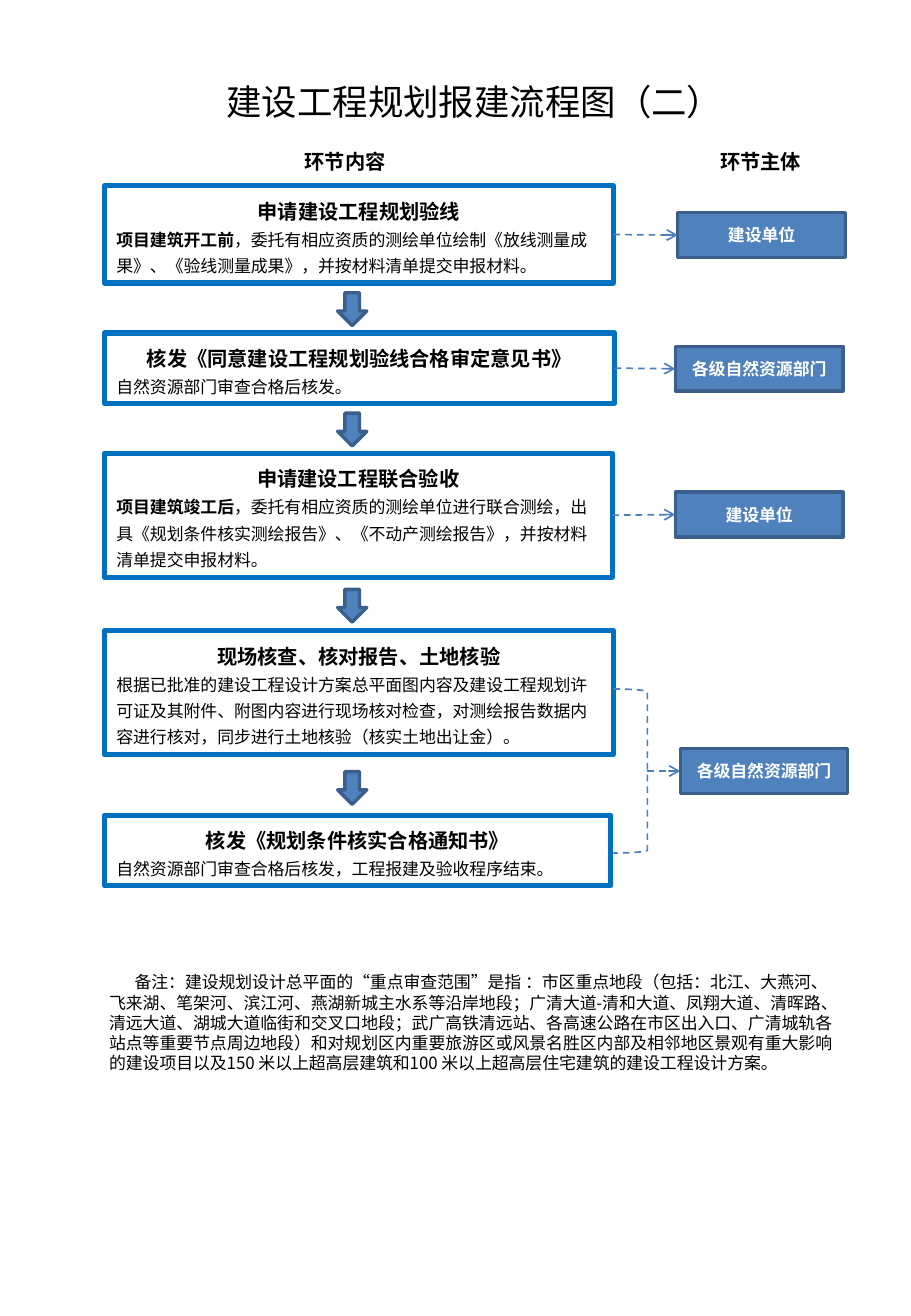
from dataclasses import dataclass

from lxml.etree import SubElement
from pptx import Presentation
from pptx.dml.color import RGBColor
from pptx.enum.dml import MSO_LINE
from pptx.enum.shapes import MSO_CONNECTOR, MSO_SHAPE as Shape
from pptx.enum.text import MSO_ANCHOR as Anchor, MSO_AUTO_SIZE, PP_ALIGN as Align
from pptx.oxml.ns import qn
from pptx.util import Inches, Pt

TITLE = "建设工程规划报建流程图（二）"
HEADINGS = [("环节内容", 2.41), ("环节主体", 5.83)]  # text, left

# top, width, height, heading, bold lead-in, detail
STEPS = [
    (1.53, 4.19, 0.80, "申请建设工程规划验线", "项目建筑开工前",
     "，委托有相应资质的测绘单位绘制《放线测量成果》、《验线测量成果》，并按材料清单提交申报材料。"),
    (2.74, 4.20, 0.58, "核发《同意建设工程规划验线合格审定意见书》", "",
     "自然资源部门审查合格后核发。"),
    (3.73, 4.18, 1.02, "申请建设工程联合验收", "项目建筑竣工后",
     "，委托有相应资质的测绘单位进行联合测绘，出具《规划条件核实测绘报告》、"
     "《不动产测绘报告》，并按材料清单提交申报材料。"),
    (5.19, 4.19, 1.02, "现场核查、核对报告、土地核验", "",
     "根据已批准的建设工程设计方案总平面图内容及建设工程规划许可证及其附件、附图内容进行现场核对检查，"
     "对测绘报告数据内容进行核对，同步进行土地核验（核实土地出让金）。"),
    (6.71, 4.17, 0.58, "核发《规划条件核实合格通知书》", "",
     "自然资源部门审查合格后核发，工程报建及验收程序结束。"),
]
ARROW_TOPS = [2.41, 3.40, 4.85, 6.35]

# left, top, name; the last one answers for the final two steps
ACTORS = [
    (5.58, 1.75, "建设单位"),
    (5.56, 2.85, "各级自然资源部门"),
    (5.56, 4.05, "建设单位"),
    (5.60, 6.16, "各级自然资源部门"),
]

NOTE = (
    "备注：建设规划设计总平面的“重点审查范围”是指 ：市区重点地段（包括：北江、大燕河、飞来湖、笔架河、"
    "滨江河、燕湖新城主水系等沿岸地段；广清大道-清和大道、凤翔大道、清晖路、清远大道、湖城大道临街和"
    "交叉口地段；武广高铁清远站、各高速公路在市区出入口、广清城轨各站点等重要节点周边地段）和对规划区内"
    "重要旅游区或风景名胜区内部及相邻地区景观有重大影响的建设项目以及150 米以上超高层建筑和100 米以上"
    "超高层住宅建筑的建设工程设计方案。"
)

STEP_LEFT = 0.86
ACTOR_SIZE = (1.38, 0.37)
BRACKET = (5.05, 5.67, 0.28, 1.35)
RIGHT_SIDE, LEFT_SIDE = 3, 1


@dataclass(frozen=True)
class Theme:
    font: str = "Noto Sans CJK SC"
    text: str = "000000"
    inverse: str = "FFFFFF"
    frame: str = "0070C0"
    fill: str = "4F81BD"
    edge: str = "3A5F8C"
    link: str = "4B7EBC"
    title_size: int = 21
    heading_size: int = 12
    body_size: int = 10
    line_height: float = 1.2


THEME = Theme()


def add_span(para, text, size, color=THEME.text, bold=False):
    span = para.add_run()
    span.text = text
    span.font.size = Pt(size)
    span.font.name = THEME.font
    span.font.bold = bold
    span.font.color.rgb = RGBColor.from_string(color)
    SubElement(span.font._element, qn("a:ea"), typeface=THEME.font)


def set_para(para, size, align=Align.LEFT, spacing=1.0):
    """Align a paragraph and fix its line pitch in proportion to the type size."""
    para.alignment = align
    para.line_spacing = Pt(round(size * THEME.line_height * spacing, 1))
    para.space_before = Pt(0)


def set_frame(box, anchor=Anchor.TOP, wrap=True):
    frame = box.text_frame
    frame.word_wrap = wrap
    frame.auto_size = MSO_AUTO_SIZE.NONE
    frame.vertical_anchor = anchor
    frame.margin_left = frame.margin_right = Inches(0.1)
    frame.margin_top = frame.margin_bottom = Inches(0.05)
    return frame


def set_line(item, color, width, dashed=False):
    item.line.color.rgb = RGBColor.from_string(color)
    item.line.width = Pt(width)
    if dashed:
        item.line.dash_style = MSO_LINE.DASH


def add_box(page, kind, place, line, width, fill=None, dashed=False):
    box = page.shapes.add_shape(kind, *map(Inches, place))
    box.shadow.inherit = False
    if fill:
        box.fill.solid()
        box.fill.fore_color.rgb = RGBColor.from_string(fill)
    else:
        box.fill.background()
    set_line(box, line, width, dashed)
    return box


def add_text(page, place, text, size, bold=False, wrap=True):
    box = page.shapes.add_textbox(*map(Inches, place))
    para = set_frame(box, wrap=wrap).paragraphs[0]
    set_para(para, size)
    add_span(para, text, size, bold=bold)
    return para


def add_title(page):
    box = page.shapes.title
    box.left, box.top, box.width, box.height = map(Inches, (0.93, 0.61, 5.95, 0.45))
    para = set_frame(box).paragraphs[0]
    set_para(para, THEME.title_size, Align.CENTER)
    add_span(para, TITLE, THEME.title_size)


def add_step(page, top, width, height, heading, lead, detail):
    box = add_box(page, Shape.RECTANGLE, (STEP_LEFT, top, width, height), THEME.frame, 3)
    frame = set_frame(box)
    para = frame.paragraphs[0]
    set_para(para, THEME.heading_size, Align.CENTER, 1.3)
    add_span(para, heading, THEME.heading_size, bold=True)
    para = frame.add_paragraph()
    set_para(para, THEME.body_size, spacing=1.3)
    if lead:
        add_span(para, lead, THEME.body_size, bold=True)
    add_span(para, detail, THEME.body_size)
    return box


def add_actor(page, left, top, name):
    box = add_box(page, Shape.RECTANGLE, (left, top, *ACTOR_SIZE), THEME.edge, 2, THEME.fill)
    para = set_frame(box, Anchor.MIDDLE).paragraphs[0]
    set_para(para, THEME.body_size, Align.CENTER)
    add_span(para, name, THEME.body_size, THEME.inverse, True)
    return box


def add_link(page, actor, step=None):
    """Dashed arrow to an actor, from a step or else from the bracket's tip."""
    left, top, width, height = map(Inches, BRACKET)
    middle = actor.top + actor.height // 2
    link = page.shapes.add_connector(
        MSO_CONNECTOR.STRAIGHT, left + width, middle, actor.left, middle)
    if step is not None:
        link.begin_connect(step, RIGHT_SIDE)
    link.end_connect(actor, LEFT_SIDE)
    set_line(link, THEME.link, 1, dashed=True)
    SubElement(link.line._get_or_add_ln(), qn("a:tailEnd"), type="arrow")
    SubElement(link._element.spPr, qn("a:effectLst"))


def main():
    deck = Presentation()
    deck.slide_width, deck.slide_height = Inches(7.5), Inches(10.83)
    page = deck.slides.add_slide(deck.slide_layouts[5])

    add_title(page)
    for text, left in HEADINGS:
        add_text(page, (left, 1.18, 0.87, 0.3), text, THEME.heading_size, True, wrap=False)

    steps = [add_step(page, *step) for step in STEPS]
    for top in ARROW_TOPS:
        add_box(page, Shape.DOWN_ARROW, (2.78, top, 0.24, 0.27), THEME.edge, 2, THEME.fill)

    actors = [add_actor(page, *actor) for actor in ACTORS]
    for actor, step in zip(actors[:3], steps):
        add_link(page, actor, step)
    add_box(page, Shape.RIGHT_BRACKET, BRACKET, THEME.link, 1, dashed=True)
    add_link(page, actors[-1])

    note = add_text(page, (0.8, 7.95, 6.2, 0.94), NOTE, THEME.body_size)
    note._p.get_or_add_pPr().set("indent", str(Inches(0.21)))
    deck.save("out.pptx")


if __name__ == "__main__":
    main()
